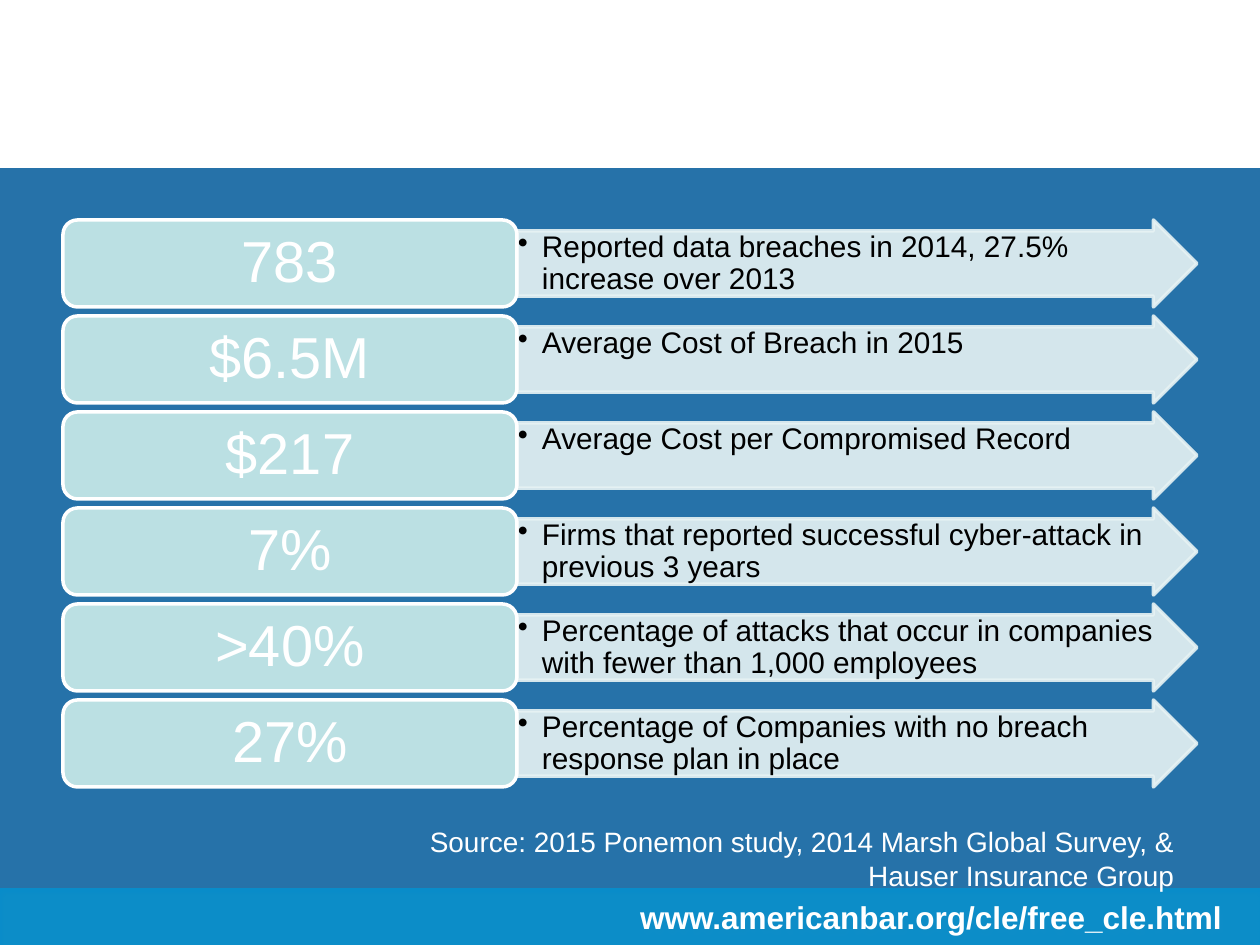
from dataclasses import dataclass

from pptx import Presentation
from pptx import util as u
from pptx.dml.color import RGBColor
from pptx.enum import shapes, text
from pptx.oxml import parse_xml
from pptx.oxml.ns import nsdecls, qn

PX = 914400 / 126  # EMU in one px


@dataclass(frozen=True)
class Theme:
    font: str = "Arial"
    backdrop: str = "005A9B"
    footer: str = "0093D3"
    box: str = "BBE0E3"
    arrow: str = "E7F3F4"
    light: str = "FFFFFF"
    dark: str = "000000"
    figure_size: int = 33
    fact_size: int = 17
    source_size: int = 16
    address_size: int = 18


@dataclass(frozen=True)
class Area:
    left: int
    top: int
    width: int
    height: int

    def emu(self) -> tuple:
        return tuple(px(n) for n in (self.left, self.top, self.width, self.height))


@dataclass(frozen=True)
class Finding:
    figure: str
    fact: str


THEME = Theme()
FINDINGS = [
    Finding("783", "Reported data breaches in 2014, 27.5% increase over 2013"),
    Finding("$6.5M", "Average Cost of Breach in 2015"),
    Finding("$217", "Average Cost per Compromised Record"),
    Finding("7%", "Firms that reported successful cyber-attack in previous 3 years"),
    Finding(">40%", "Percentage of attacks that occur in companies "
                    "with fewer than 1,000 employees"),
    Finding("27%", "Percentage of Companies with no breach response plan in place"),
]
ROW_TOP, ROW_PITCH, ROW_HEIGHT = 220, 96, 87
BOX_LEFT, BOX_WIDTH, ARROW_WIDTH = 63, 454, 680


def px(length: int) -> int:
    return u.Emu(round(length * PX))


def set_alpha(fill, percent: int) -> None:
    color = fill._xPr.find(qn("a:solidFill"))[0]
    color.append(parse_xml(f'<a:alpha {nsdecls("a")} val="{percent * 1000}"/>'))


def add_panel(slide, kind, area: Area, color: str, alpha: int = 100, edge: str = ""):
    panel = slide.shapes.add_shape(kind, *area.emu())
    panel.shadow.inherit = False
    panel.fill.solid()
    panel.fill.fore_color.rgb = RGBColor.from_string(color)
    fills = [panel.fill]
    if edge:
        panel.line.width = u.Pt(2)
        panel.line.color.rgb = RGBColor.from_string(edge)
        fills.append(panel.line.fill)
    else:
        panel.line.fill.background()
    if alpha < 100:
        for fill in fills:
            set_alpha(fill, alpha)
    return panel


def add_soft_shadow(panel) -> None:
    panel._element.spPr.find(qn("a:effectLst")).append(parse_xml(
        f'<a:outerShdw {nsdecls("a")} blurRad="40000" dist="23000" dir="5400000" '
        'rotWithShape="0"><a:srgbClr val="808080"><a:alpha val="35000"/>'
        '</a:srgbClr></a:outerShdw>'))


def write(shape, words: str, *, size: int, color: str, bold: bool = False,
          align=text.PP_ALIGN.LEFT, anchor=text.MSO_ANCHOR.TOP,
          insets: tuple = (13, 6, 13, 6), spacing: float = 1.0,
          bullet_indent: int = 0) -> None:
    frame = shape.text_frame
    frame.word_wrap = True
    frame.vertical_anchor = anchor
    (frame.margin_left, frame.margin_top,
     frame.margin_right, frame.margin_bottom) = map(px, insets)
    paragraph = frame.paragraphs[0]
    paragraph.alignment = align
    paragraph.line_spacing = spacing
    if bullet_indent:
        properties = paragraph._p.get_or_add_pPr()
        properties.set("marL", str(px(bullet_indent)))
        properties.set("indent", str(-px(bullet_indent)))
        properties.append(parse_xml(f'<a:buChar {nsdecls("a")} char="•"/>'))
    run = paragraph.add_run()
    run.text = words
    run.font.name = THEME.font
    run.font.size = u.Pt(size)
    run.font.bold = bold
    run.font.color.rgb = RGBColor.from_string(color)


def add_finding(slide, finding: Finding, top: int) -> None:
    arrow = add_panel(slide, shapes.MSO_SHAPE.RIGHT_ARROW,
                      Area(BOX_LEFT + BOX_WIDTH, top, ARROW_WIDTH, ROW_HEIGHT),
                      THEME.arrow, alpha=90, edge=THEME.arrow)
    arrow.adjustments[0] = 0.75
    write(arrow, finding.fact, size=THEME.fact_size, color=THEME.dark,
          insets=(1, 1, 1, 1), spacing=0.9, bullet_indent=24)
    box = add_panel(slide, shapes.MSO_SHAPE.ROUNDED_RECTANGLE,
                    Area(BOX_LEFT, top, BOX_WIDTH, ROW_HEIGHT),
                    THEME.box, edge=THEME.light)
    write(box, finding.figure, size=THEME.figure_size, color=THEME.light,
          align=text.PP_ALIGN.CENTER, anchor=text.MSO_ANCHOR.MIDDLE,
          insets=(18, 9, 18, 9), spacing=0.9)


def main() -> None:
    deck = Presentation()
    deck.slide_width, deck.slide_height = px(1260), px(945)
    slide = deck.slides.add_slide(deck.slide_layouts[6])

    # Backdrop and footer band
    add_panel(slide, shapes.MSO_SHAPE.RECTANGLE, Area(0, 168, 1260, 777),
              THEME.backdrop, alpha=85)
    footer = add_panel(slide, shapes.MSO_SHAPE.RECTANGLE, Area(0, 888, 1260, 57),
                       THEME.footer, alpha=80)
    add_soft_shadow(footer)
    write(footer, "www.americanbar.org/cle/free_cle.html", size=THEME.address_size,
          color=THEME.light, bold=True, align=text.PP_ALIGN.RIGHT,
          anchor=text.MSO_ANCHOR.MIDDLE, insets=(0, 0, 38, 0))

    # Figures with their facts
    for row, finding in enumerate(FINDINGS):
        add_finding(slide, finding, ROW_TOP + row * ROW_PITCH)

    # Source line
    source = slide.shapes.add_textbox(*Area(346, 819, 841, 81).emu())
    write(source, "Source: 2015 Ponemon study, 2014 Marsh Global Survey, & "
                  "Hauser Insurance Group",
          size=THEME.source_size, color=THEME.light, align=text.PP_ALIGN.RIGHT)

    deck.save("out.pptx")


if __name__ == "__main__":
    main()
